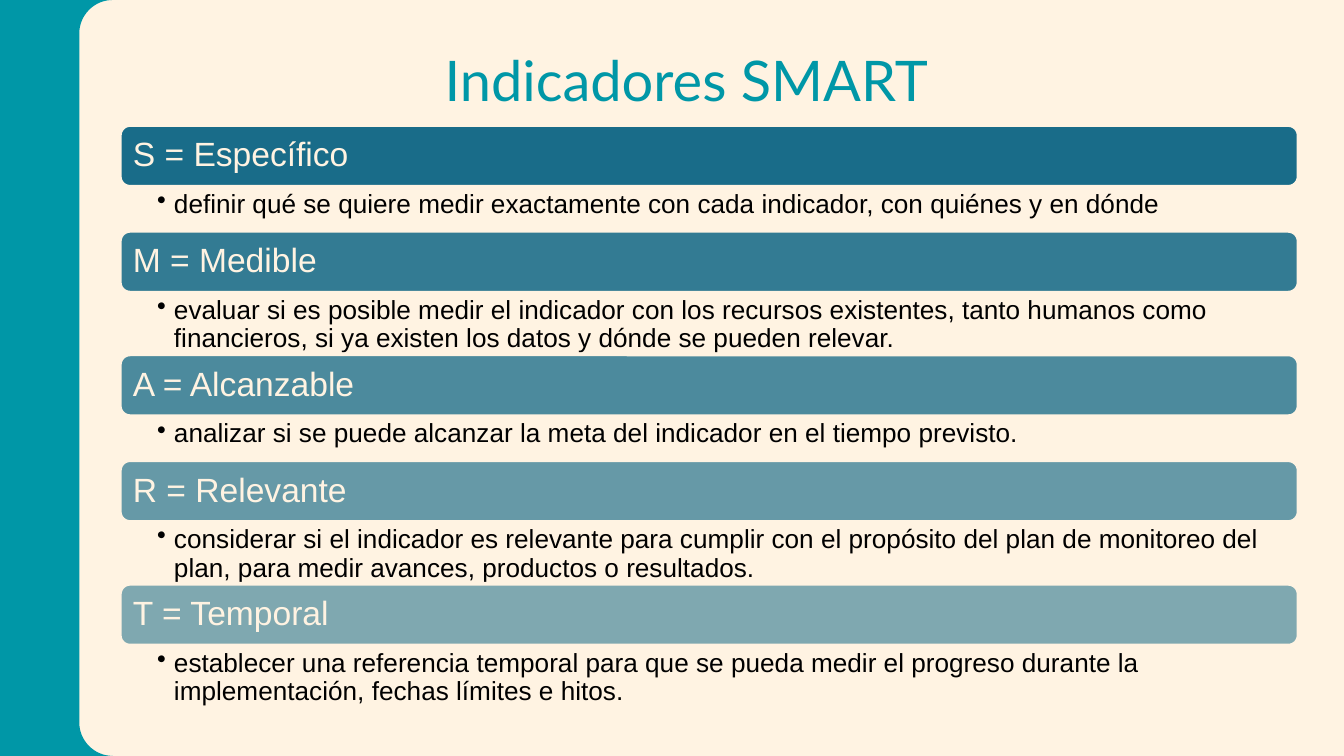
import math

from lxml import etree
from pptx import Presentation
from pptx.dml.color import RGBColor
from pptx.enum import shapes, text
from pptx.oxml import ns
from pptx.util import Pt

TITLE = "Indicadores SMART"
# heading, explanation, lines the explanation takes
CRITERIA = [
    ("S = Específico",
     "definir qué se quiere medir exactamente con cada indicador, con quiénes y en dónde", 1),
    ("M = Medible",
     "evaluar si es posible medir el indicador con los recursos existentes, tanto humanos como "
     "financieros, si ya existen los datos y dónde se pueden relevar.", 2),
    ("A = Alcanzable",
     "analizar si se puede alcanzar la meta del indicador en el tiempo previsto.", 1),
    ("R = Relevante",
     "considerar si el indicador es relevante para cumplir con el propósito del plan de monitoreo "
     "del plan, para medir avances, productos o resultados.", 2),
    ("T = Temporal",
     "establecer una referencia temporal para que se pueda medir el progreso durante la "
     "implementación, fechas límites e hitos.", 2),
]
THEME = {
    "cream": RGBColor.from_string("FFF3E2"),
    "teal": RGBColor.from_string("0097A7"),
    "blue": RGBColor.from_string("005E80"),
    "black": RGBColor.from_string("000000"),
    "title_font": "Lato", "title_size": 30,
    "font": "Arial", "heading_size": 18, "detail_size": 14,
}
WIDTH, HEIGHT = 720, 405
LEFT, TOP, LIST_WIDTH = 64.2, 67, 631.5
BAR_HEIGHT = 33.1
DETAIL_HEIGHTS = {1: 23.6, 2: 33.1}
BAND_EDGE, CORNER = 42.5, 18


def set_margins(tf, left, top, right, bottom):
    tf.margin_left, tf.margin_top = Pt(left), Pt(top)
    tf.margin_right, tf.margin_bottom = Pt(right), Pt(bottom)


def add_run(p, words, font, size, color):
    r = p.add_run()
    r.text = words
    r.font.name, r.font.size = font, Pt(size)
    r.font.color.rgb = color


def add_side_band(slide):
    """Band on the left whose inner edge flares out at both ends."""
    center = BAND_EDGE + CORNER
    angles = [math.radians(90 * i / 16) for i in range(17)]
    arc = [(center - CORNER * math.sin(a), CORNER * (1 - math.cos(a))) for a in angles]
    points = arc + [(x, HEIGHT - y) for x, y in reversed(arc)] + [(0, HEIGHT)]
    builder = slide.shapes.build_freeform(0, 0)
    builder.add_line_segments([(Pt(x), Pt(y)) for x, y in points], close=True)
    sp = builder.convert_to_shape()
    sp.shadow.inherit = False
    sp.fill.solid()
    sp.fill.fore_color.rgb = THEME["teal"]
    sp.line.fill.background()


def add_title(slide):
    sp = slide.shapes.title
    sp.left, sp.top, sp.width, sp.height = Pt(64.2), Pt(17.3), Pt(607), Pt(45.4)
    tf = sp.text_frame
    tf.auto_size = text.MSO_AUTO_SIZE.NONE
    tf.vertical_anchor = text.MSO_ANCHOR.TOP
    set_margins(tf, 7.2, 7.2, 7.2, 7.2)
    p = tf.paragraphs[0]
    p.alignment = text.PP_ALIGN.CENTER
    add_run(p, TITLE, THEME["title_font"], THEME["title_size"], THEME["teal"])


def add_heading_bar(group, y, heading, opacity):
    sp = group.shapes.add_shape(shapes.MSO_SHAPE.ROUNDED_RECTANGLE,
                                Pt(LEFT), Pt(y), Pt(LIST_WIDTH), Pt(BAR_HEIGHT))
    sp.shadow.inherit = False
    sp.fill.solid()
    sp.fill.fore_color.rgb = THEME["blue"]
    color = sp.fill._xPr.find(".//" + ns.qn("a:srgbClr"))
    etree.SubElement(color, ns.qn("a:alpha"), val=str(opacity * 1000))
    sp.line.color.rgb, sp.line.width = THEME["cream"], Pt(2)
    tf = sp.text_frame
    tf.word_wrap = True
    tf.vertical_anchor = text.MSO_ANCHOR.MIDDLE
    set_margins(tf, 5.4, 3.6, 5.4, 3.6)
    p = tf.paragraphs[0]
    p.alignment, p.line_spacing = text.PP_ALIGN.LEFT, 0.9
    add_run(p, heading, THEME["font"], THEME["heading_size"], THEME["cream"])


def add_detail(group, y, height, detail):
    sp = group.shapes.add_textbox(Pt(LEFT), Pt(y), Pt(LIST_WIDTH), Pt(height))
    tf = sp.text_frame
    tf.word_wrap = True
    set_margins(tf, 20, 2.2, 10, 2.2)
    p = tf.paragraphs[0]
    p.level, p.line_spacing = 1, 0.9
    pPr = p._p.get_or_add_pPr()
    pPr.set("marL", str(Pt(9)))
    pPr.set("indent", str(Pt(-9)))
    etree.SubElement(pPr, ns.qn("a:buChar"), char="•")
    add_run(p, detail, THEME["font"], THEME["detail_size"], THEME["black"])


def main():
    prs = Presentation()
    prs.slide_width, prs.slide_height = Pt(WIDTH), Pt(HEIGHT)
    slide = prs.slides.add_slide(prs.slide_layouts[5])
    slide.background.fill.solid()
    slide.background.fill.fore_color.rgb = THEME["cream"]
    add_side_band(slide)
    add_title(slide)

    group = slide.shapes.add_group_shape()
    y = TOP
    for i, (heading, detail, lines) in enumerate(CRITERIA):
        add_heading_bar(group, y, heading, opacity=90 - 10 * i)
        y += BAR_HEIGHT
        add_detail(group, y, DETAIL_HEIGHTS[lines], detail)
        y += DETAIL_HEIGHTS[lines]
    prs.save("out.pptx")


if __name__ == "__main__":
    main()
